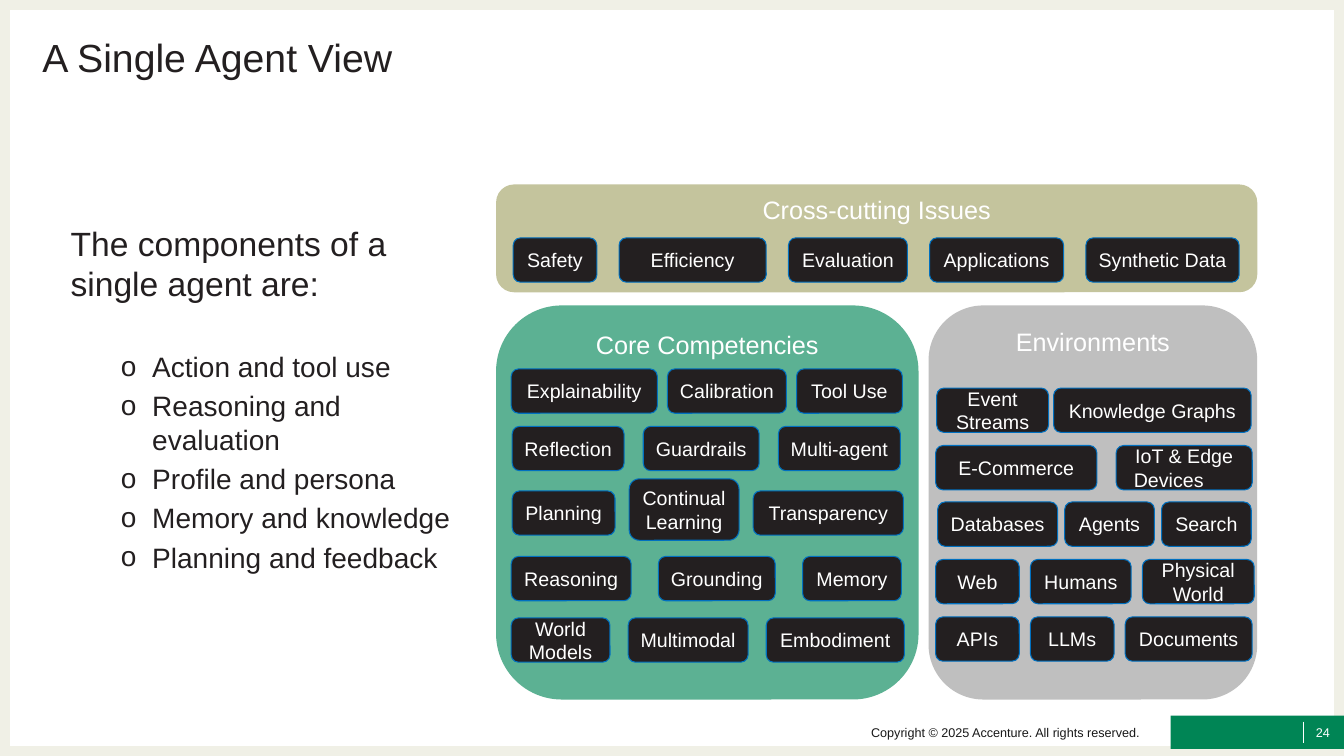
from lxml import etree
from pptx import Presentation
from pptx.dml.color import RGBColor
from pptx.enum.shapes import MSO_CONNECTOR, MSO_SHAPE
from pptx.enum.text import MSO_ANCHOR, MSO_AUTO_SIZE, PP_ALIGN
from pptx.oxml.ns import qn
from pptx.util import Inches, Pt

RECT, ROUNDED = MSO_SHAPE.RECTANGLE, MSO_SHAPE.ROUNDED_RECTANGLE
STRAIGHT = MSO_CONNECTOR.STRAIGHT
TOP, MIDDLE = MSO_ANCHOR.TOP, MSO_ANCHOR.MIDDLE
LEFT, CENTER = PP_ALIGN.LEFT, PP_ALIGN.CENTER
NO_AUTOFIT = MSO_AUTO_SIZE.NONE

FONT = "Arial"
INK, WHITE, FRAME, CHIP_EDGE = "231F20", "FFFFFF", "F0F0E6", "0070C0"
GREEN, COPYRIGHT_INK = "008555", "181818"
CHIP_HEIGHT, CHIP_MARGIN = 0.44, 0.08

COMPONENTS = [
    "Action and tool use",
    "Reasoning and evaluation",
    "Profile and persona",
    "Memory and knowledge",
    "Planning and feedback",
]

# Heading, fill, (left, top, width, height)
PANELS = [
    ("Cross-cutting Issues", "C4C49D", (4.92, 1.83, 7.55, 1.07)),
    ("Core Competencies", "5CB193", (4.92, 3.03, 4.19, 3.91)),
    ("Environments", "BFBFBF", (9.21, 3.03, 3.26, 3.91)),
]

# Left of the first chip, top, gap between chips, (label, width) of each chip
CHIP_ROWS = [
    # Cross-cutting issues
    (5.09, 2.36, 0.22, [("Safety", 0.83), ("Efficiency", 1.46), ("Evaluation", 1.18),
                        ("Applications", 1.33), ("Synthetic Data", 1.52)]),
    # Core competencies
    (5.07, 3.66, 0.1, [("Explainability", 1.45), ("Calibration", 1.18), ("Tool Use", 1.05)]),
    (5.08, 4.23, 0.19, [("Reflection", 1.11), ("Guardrails", 1.15), ("Multi-agent", 1.21)]),
    (5.08, 4.87, 0.14, [("Planning", 1.02), ("Continual Learning", 1.09), ("Transparency", 1.49)]),
    (5.07, 5.52, 0.27, [("Reasoning", 1.19), ("Grounding", 1.16), ("Memory", 0.98)]),
    (5.07, 6.13, 0.18, [("World Models", 0.98), ("Multimodal", 1.19), ("Embodiment", 1.37)]),
    # Environments
    (9.29, 3.85, 0.05, [("Event Streams", 1.11), ("Knowledge Graphs", 1.96)]),
    (9.28, 4.42, 0.19, [("E-Commerce", 1.6), ("IoT & Edge\nDevices\t", 1.35)]),
    (9.3, 4.98, 0.07, [("Databases", 1.19), ("Agents", 0.89), ("Search", 0.89)]),
    (9.28, 5.55, 0.11, [("Web", 0.83), ("Humans", 1), ("Physical World", 1.11)]),
    (9.28, 6.12, 0.11, [("APIs", 0.83), ("LLMs", 0.83), ("Documents", 1.26)]),
]
# Label: (top, height) where it departs from its row
TALL_CHIPS = {"Continual Learning": (4.75, 0.61)}


def rgb(hex_colour):
    return RGBColor.from_string(hex_colour)


def style(paragraph, size, colour, align=LEFT):
    paragraph.alignment = align
    paragraph.font.name = FONT
    paragraph.font.size = Pt(size)
    paragraph.font.color.rgb = rgb(colour)


def place(item, box):
    item.left, item.top, item.width, item.height = map(Inches, box)


def add_block(slide, kind, box, fill, edge=None):
    block = slide.shapes.add_shape(kind, *map(Inches, box))
    block.shadow.inherit = False
    block.fill.solid()
    block.fill.fore_color.rgb = rgb(fill)
    if edge:
        block.line.color.rgb = rgb(edge)
        block.line.width = Pt(0.75)
    else:
        block.line.fill.background()
    return block


def add_labelled_block(slide, label, box, fill, size, anchor, edge=None):
    frame = add_block(slide, ROUNDED, box, fill, edge).text_frame
    frame.word_wrap = True
    frame.vertical_anchor = anchor
    frame.text = label
    for paragraph in frame.paragraphs:
        style(paragraph, size, WHITE, CENTER)
    return frame


def add_chip_row(slide, left, top, gap, chips):
    for label, width in chips:
        chip_top, height = TALL_CHIPS.get(label, (top, CHIP_HEIGHT))
        frame = add_labelled_block(slide, label, (left, chip_top, width, height),
                                   INK, 14, MIDDLE, CHIP_EDGE)
        # Slim side margins keep single words on one line
        frame.margin_left = frame.margin_right = Inches(CHIP_MARGIN)
        left += width + gap


def clear_margins(frame):
    frame.margin_left = frame.margin_right = 0
    frame.margin_top = frame.margin_bottom = 0


def add_footer_text(slide, text, box, colour, align):
    frame = slide.shapes.add_textbox(*map(Inches, box)).text_frame
    frame.word_wrap = True
    clear_margins(frame)
    frame.vertical_anchor = MIDDLE
    frame.text = text
    style(frame.paragraphs[0], 9, colour, align)


def add_page_frame(slide):
    slide.background.fill.solid()
    slide.background.fill.fore_color.rgb = rgb(FRAME)
    page = add_block(slide, RECT, (0.1, 0.1, 13.13, 7.3), WHITE)
    # Send behind the placeholders
    slide.shapes.element.insert(2, page.element)


def add_footer(slide):
    add_block(slide, RECT, (11.61, 7.1, 1.72, 0.33), GREEN)
    divider = slide.shapes.add_connector(
        STRAIGHT, Inches(12.93), Inches(7.16), Inches(12.93), Inches(7.37))
    divider.line.color.rgb = rgb(WHITE)
    divider.line.width = Pt(1)
    etree.SubElement(divider.element.spPr, qn("a:effectLst"))
    add_footer_text(slide, "24", (13.03, 7.17, 0.18, 0.2), WHITE, CENTER)
    add_footer_text(slide, "Copyright © 2025 Accenture. All rights reserved.",
                    (8.64, 7.16, 2.86, 0.21), COPYRIGHT_INK, LEFT)


def fill_title(title):
    place(title, (0.42, 0.42, 12.68, 0.55))
    frame = title.text_frame
    clear_margins(frame)
    frame.vertical_anchor = TOP
    frame.auto_size = NO_AUTOFIT
    frame.text = "A Single Agent View"
    frame.paragraphs[0].line_spacing = 0.8
    style(frame.paragraphs[0], 28, INK)


def set_bullet(paragraph, char, margin, indent):
    props = paragraph._p.get_or_add_pPr()
    props.set("marL", str(Inches(margin)))
    props.set("indent", str(Inches(indent)))
    if char:
        etree.SubElement(props, qn("a:buFont")).set("typeface", FONT)
        etree.SubElement(props, qn("a:buChar")).set("char", char)
    else:
        etree.SubElement(props, qn("a:buNone"))


def fill_components(body):
    place(body, (0.6, 2.16, 4.13, 5.42))
    frame = body.text_frame
    frame.auto_size = NO_AUTOFIT
    frame.vertical_anchor = TOP
    frame.text = "The components of a single agent are:"
    intro = frame.paragraphs[0]
    set_bullet(intro, None, 0, 0)
    intro.space_before = Pt(0)
    style(intro, 24, INK)
    for index, component in enumerate(COMPONENTS):
        item = frame.add_paragraph()
        item.text = component
        item.level = 1
        set_bullet(item, "o", 0.81, -0.31)
        item.space_before = Pt(4 if index else 33)
        style(item, 20, INK)


def main():
    deck = Presentation()
    deck.slide_width, deck.slide_height = Inches(13.33), Inches(7.5)
    slide = deck.slides.add_slide(deck.slide_layouts[1])

    # Page and footer
    add_page_frame(slide)
    add_footer(slide)

    # Title and list
    fill_title(slide.shapes.title)
    fill_components(slide.placeholders[1])

    # Agent diagram
    for heading, fill, box in PANELS:
        add_labelled_block(slide, heading, box, fill, 18, TOP)
    for row in CHIP_ROWS:
        add_chip_row(slide, *row)

    deck.save("out.pptx")


if __name__ == "__main__":
    main()
